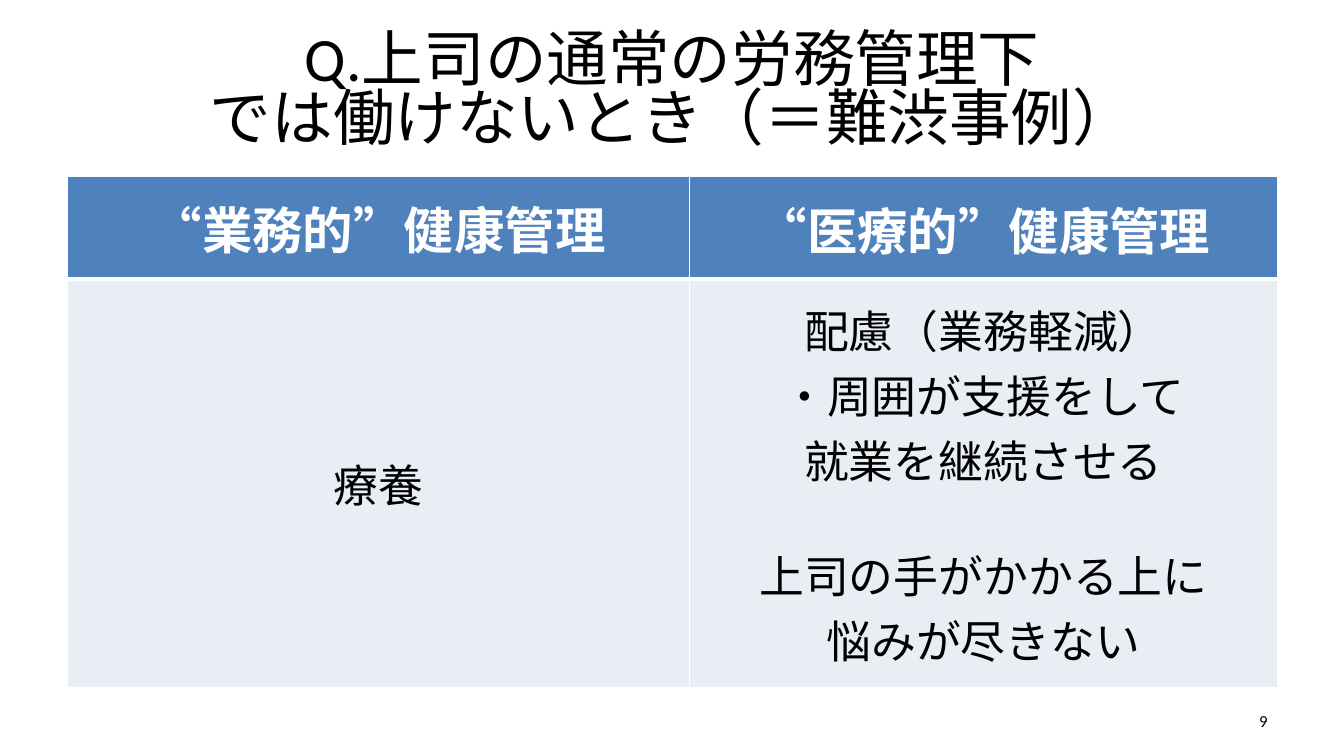
from pptx import Presentation
from pptx.dml.color import RGBColor
from pptx.enum.text import MSO_ANCHOR as Anchor, PP_ALIGN as Align
from pptx.oxml import parse_xml
from pptx.oxml.ns import nsdecls
from pptx.util import Inches, Pt


def write(frame, lines, align, color, **formats):
    frame.vertical_anchor = Anchor.MIDDLE
    frame.word_wrap = True
    for index, line in enumerate(lines):
        para = frame.add_paragraph() if index else frame.paragraphs[0]
        para.text = line
        para.alignment = align
        for span in para.runs:
            span.font.color.rgb = RGBColor.from_string(color)
            for name, value in formats.items():
                setattr(span.font, name, value)


def add_border(cell, side, position, points):
    line = parse_xml(
        f'<a:{side} {nsdecls("a")} w="{Pt(points)}"><a:solidFill>'
        f'<a:srgbClr val="FFFFFF"/></a:solidFill></a:{side}>')
    cell._tc.get_or_add_tcPr().insert(position, line)


deck = Presentation()
deck.slide_width, deck.slide_height = Inches(13.33), Inches(7.5)
page = deck.slides.add_slide(deck.slide_layouts[5])

title = page.shapes.title
title.left, title.top = Inches(0.67), Inches(0.3)
title.width, title.height = Inches(12), Inches(1.25)
write(title.text_frame, ["Q.上司の通常の労務管理下\vでは働けないとき（＝難渋事例）"],
      Align.CENTER, "000000", size=Pt(44), name="Calibri")
title.text_frame.paragraphs[0].line_spacing = 0.8

table = page.shapes.add_table(
    2, 2, Inches(0.67), Inches(1.75), Inches(12), Inches(5.07)).table
for column, width in zip(table.columns, (6.17, 5.83)):
    column.width = Inches(width)
for row, height in zip(table.rows, (1.02, 4.05)):
    row.height = Inches(height)

header = {"size": Pt(36), "bold": True}
body = {"size": Pt(32), "bold": False}
care_lines = ["配慮（業務軽減）", "・周囲が支援をして", "就業を継続させる",
              "上司の手がかかる上に", "悩みが尽きない"]
rows = [
    ("4F81BD", "FFFFFF", header, (1, 1, 1, 3),
     [(["“業務的”健康管理"], "Calibri"), (["“医療的”健康管理"], "Calibri")]),
    ("E9EDF4", "000000", body, (1, 1, 3, 1),
     [(["療養"], "Calibri"), (care_lines, "Arial")]),
]
for r, (fill, color, formats, borders, cells) in enumerate(rows):
    for c, (lines, font) in enumerate(cells):
        cell = table.cell(r, c)
        cell.fill.solid()
        cell.fill.fore_color.rgb = RGBColor.from_string(fill)
        cell.vertical_anchor = Anchor.MIDDLE
        if c == 1:
            cell.margin_left = cell.margin_top = cell.margin_right = Inches(0.01)
            cell.margin_bottom = 0
        write(cell.text_frame, lines, Align.CENTER, color, name=font, **formats)
        for position, side in enumerate(("lnL", "lnR", "lnT", "lnB")):
            add_border(cell, side, position, borders[position])
table.cell(1, 1).text_frame.paragraphs[3].space_before = Pt(36)

number = page.shapes.add_textbox(Inches(9.56), Inches(6.95), Inches(3.11), Inches(0.4))
write(number.text_frame, ["9"], Align.RIGHT, "000000", size=Pt(12), name="Calibri")

deck.save("out.pptx")
